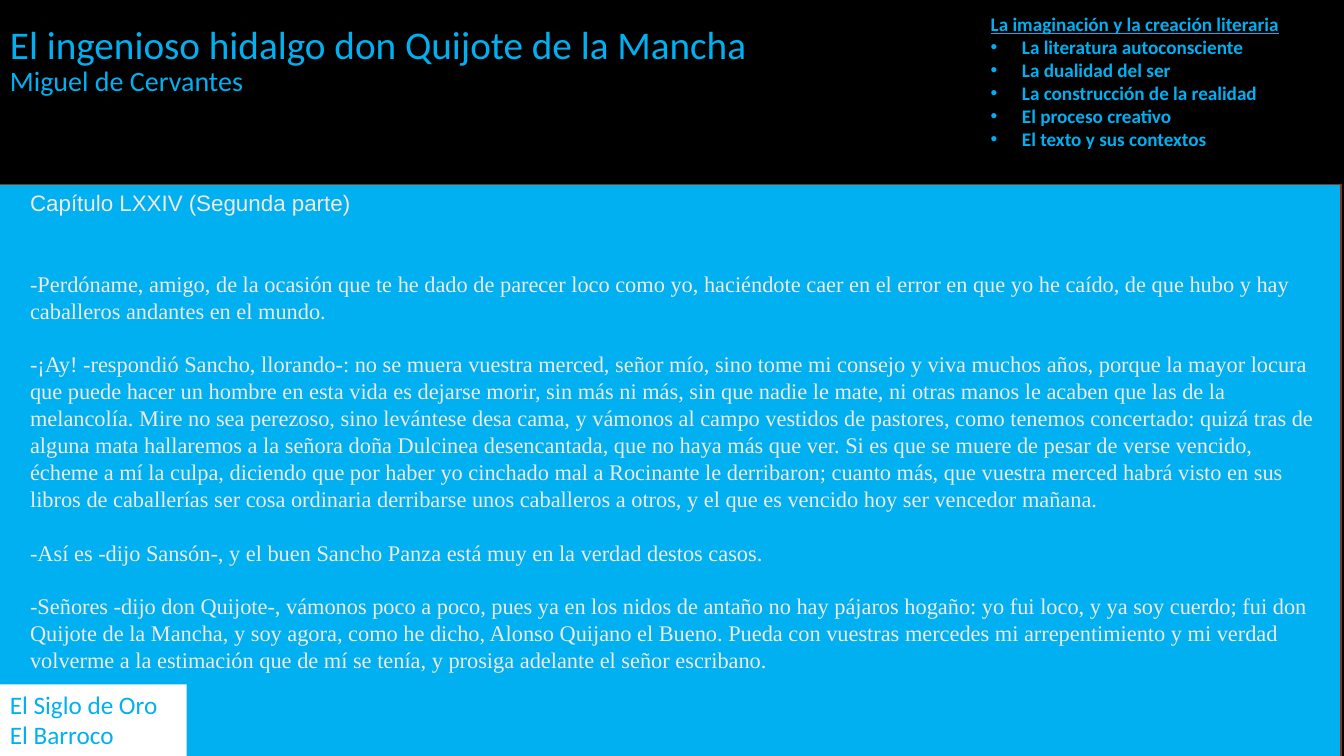
from dataclasses import dataclass, field

from lxml.etree import SubElement
from pptx import Presentation
from pptx.dml.color import RGBColor
from pptx.enum.shapes import MSO_SHAPE as Preset
from pptx.enum.text import MSO_ANCHOR as Anchor, PP_ALIGN as Align
from pptx.oxml.ns import qn
from pptx.util import Inches, Pt

BLACK = RGBColor(0x00, 0x00, 0x00)
WHITE = RGBColor(0xFF, 0xFF, 0xFF)
SKY = RGBColor(0x00, 0xB0, 0xF0)
RUST = RGBColor(0x8B, 0x33, 0x14)
CREAM = RGBColor(0xEF, 0xE9, 0xE4)

WIDTH, HEIGHT = Inches(13.333), Inches(7.5)
BULLET_INDENT = Inches(0.31)


@dataclass(frozen=True)
class Frame:
    """Place and size in hundredths of the slide's width and height."""
    left: float
    top: float
    width: float
    height: float

    def lengths(self) -> tuple[int, int, int, int]:
        return (int(WIDTH * self.left / 100), int(HEIGHT * self.top / 100),
                int(WIDTH * self.width / 100), int(HEIGHT * self.height / 100))


@dataclass(frozen=True)
class Line:
    text: str
    font: dict
    layout: dict = field(default_factory=dict)
    bullet: bool = False


@dataclass(frozen=True)
class TextBlock:
    frame: Frame
    lines: list[Line]
    anchor: Anchor = Anchor.TOP


def lettering(name: str, size: float, colour: RGBColor, **extra) -> dict:
    return {"name": name, "size": Pt(size), "colour": colour, **extra}


def apply_format(target, values: dict) -> None:
    for key, value in values.items():
        if key == "colour":
            target.color.rgb = value
        else:
            setattr(target, key, value)


def add_bullet(para) -> None:
    properties = para._p.get_or_add_pPr()
    properties.set("marL", str(BULLET_INDENT))
    properties.set("indent", str(-BULLET_INDENT))
    SubElement(properties, qn("a:buFont")).set("typeface", "Arial")
    SubElement(properties, qn("a:buChar")).set("char", "•")


def write_lines(box, block: TextBlock) -> None:
    text_frame = box.text_frame
    text_frame.word_wrap = True
    text_frame.vertical_anchor = block.anchor
    for index, line in enumerate(block.lines):
        para = text_frame.add_paragraph() if index else text_frame.paragraphs[0]
        if line.bullet:
            add_bullet(para)
        apply_format(para, {"alignment": Align.LEFT, **line.layout})
        span = para.add_run()
        span.text = line.text
        apply_format(span.font, line.font)


def add_rectangle(page, frame: Frame, fill: RGBColor):
    box = page.shapes.add_shape(Preset.RECTANGLE, *frame.lengths())
    box.shadow.inherit = False
    box.fill.solid()
    box.fill.fore_color.rgb = fill
    box.line.fill.background()
    return box


def add_text(page, block: TextBlock) -> None:
    write_lines(page.shapes.add_textbox(*block.frame.lengths()), block)


PANEL = Frame(-0.22, 24.4, 100, 76)

TIGHT = {"line_spacing": 0.9}
TITLE = TextBlock(Frame(0, -3.07, 67.5, 16.67), [
    Line("El ingenioso hidalgo don Quijote de la Mancha",
         lettering("Calibri", 28, SKY), TIGHT),
    Line("Miguel de Cervantes", lettering("Calibri", 20, SKY), TIGHT),
], Anchor.BOTTOM)

TOPIC_FONT = lettering("Calibri", 13.7, SKY, bold=True)
TOPIC_LAYOUT = {"line_spacing": Pt(16.4)}
TOPICS = TextBlock(Frame(72.98, -4.93, 35.63, 25.47), [
    Line("La imaginación y la creación literaria",
         {**TOPIC_FONT, "underline": True}, TOPIC_LAYOUT),
    *(Line(topic, TOPIC_FONT, TOPIC_LAYOUT, bullet=True) for topic in (
        "La literatura autoconsciente",
        "La dualidad del ser",
        "La construcción de la realidad",
        "El proceso creativo",
        "El texto y sus contextos",
    )),
], Anchor.BOTTOM)

PERIOD_FONT = lettering("Calibri", 18, SKY)
PERIOD = TextBlock(Frame(0, 90.53, 13.88, 9.47), [
    Line(text, PERIOD_FONT) for text in ("El Siglo de Oro", "El Barroco")
])

# Each speech is a tuple of its sentences.
SPEECHES = (
    ("-Perdóname, amigo, de la ocasión que te he dado de parecer loco como yo, "
     "haciéndote caer en el error en que yo he caído, de que hubo y hay "
     "caballeros andantes en el mundo.",),
    ("-¡Ay! -respondió Sancho, llorando-: no se muera vuestra merced, señor mío, "
     "sino tome mi consejo y viva muchos años, porque la mayor locura que puede "
     "hacer un hombre en esta vida es dejarse morir, sin más ni más, sin que nadie "
     "le mate, ni otras manos le acaben que las de la melancolía.",
     "Mire no sea perezoso, sino levántese desa cama, y vámonos al campo vestidos "
     "de pastores, como tenemos concertado: quizá tras de alguna mata hallaremos a "
     "la señora doña Dulcinea desencantada, que no haya más que ver.",
     "Si es que se muere de pesar de verse vencido, écheme a mí la culpa, diciendo "
     "que por haber yo cinchado mal a Rocinante le derribaron; cuanto más, que "
     "vuestra merced habrá visto en sus libros de caballerías ser cosa ordinaria "
     "derribarse unos caballeros a otros, y el que es vencido hoy ser vencedor "
     "mañana."),
    ("-Así es -dijo Sansón-, y el buen Sancho Panza está muy en la verdad destos "
     "casos.",),
    ("-Señores -dijo don Quijote-, vámonos poco a poco, pues ya en los nidos de "
     "antaño no hay pájaros hogaño: yo fui loco, y ya soy cuerdo; fui don Quijote "
     "de la Mancha, y soy agora, como he dicho, Alonso Quijano el Bueno.",
     "Pueda con vuestras mercedes mi arrepentimiento y mi verdad volverme a la "
     "estimación que de mí se tenía, y prosiga adelante el señor escribano."),
)
ROW = Pt(19.2)
SPEECH_FONT = lettering("Times New Roman", 16, CREAM)
PASSAGE = TextBlock(Frame(1.5, 24.4, 97.05, 66.93), [
    Line("Capítulo LXXIV (Segunda parte)", lettering("Arial", 16, CREAM),
         {"line_spacing": ROW, "space_after": ROW}),
    *(Line(" ".join(sentences), SPEECH_FONT,
           {"line_spacing": ROW, "space_before": ROW})
      for sentences in SPEECHES),
])


def main() -> None:
    deck = Presentation()
    deck.slide_width, deck.slide_height = WIDTH, HEIGHT
    page = deck.slides.add_slide(deck.slide_layouts[6])
    page.background.fill.solid()
    page.background.fill.fore_color.rgb = BLACK

    panel = add_rectangle(page, PANEL, SKY)
    panel.line.color.rgb = RUST
    panel.line.width = Pt(1.25)
    add_text(page, TITLE)
    add_text(page, TOPICS)
    write_lines(add_rectangle(page, PERIOD.frame, WHITE), PERIOD)
    add_text(page, PASSAGE)
    deck.save("out.pptx")


if __name__ == "__main__":
    main()
